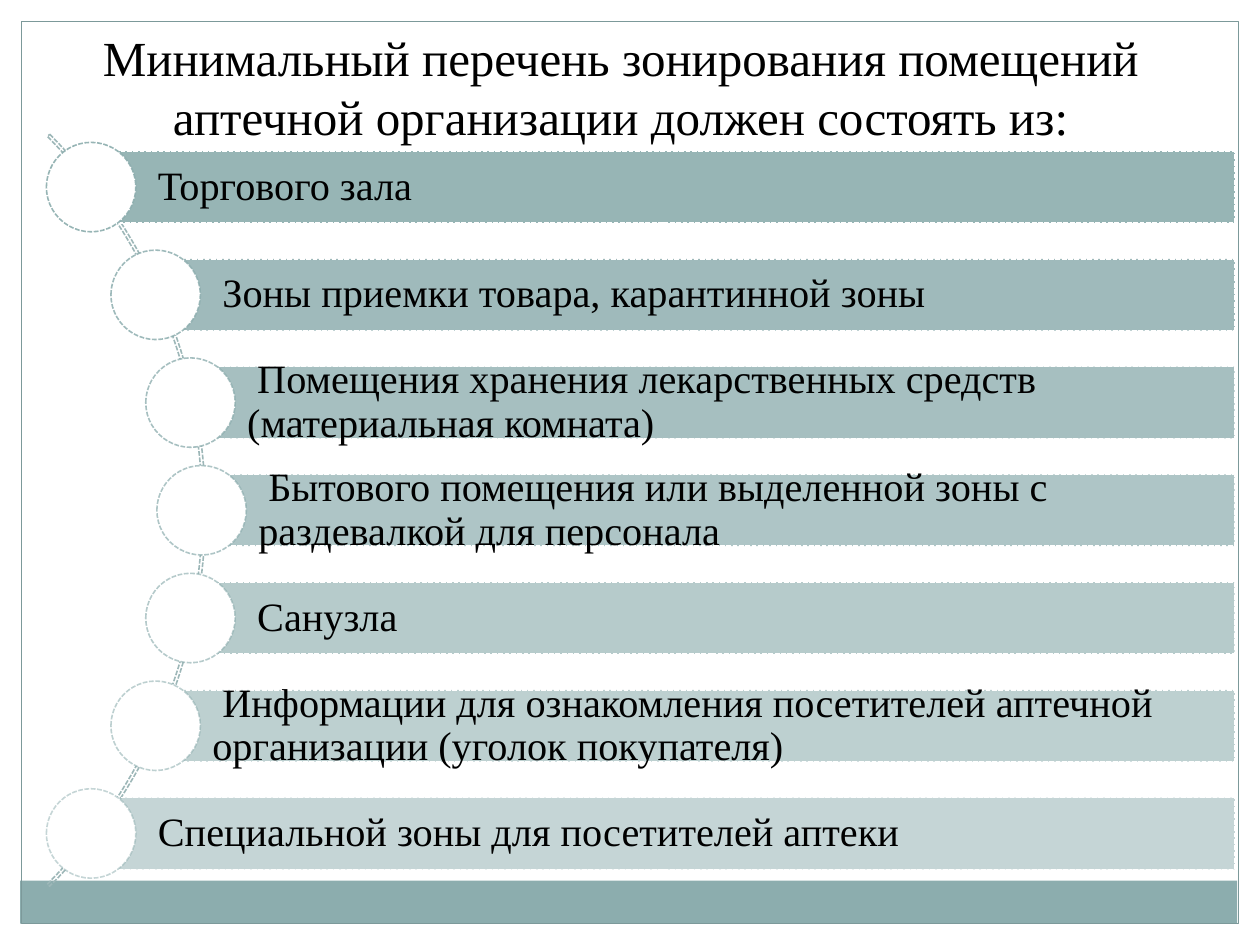
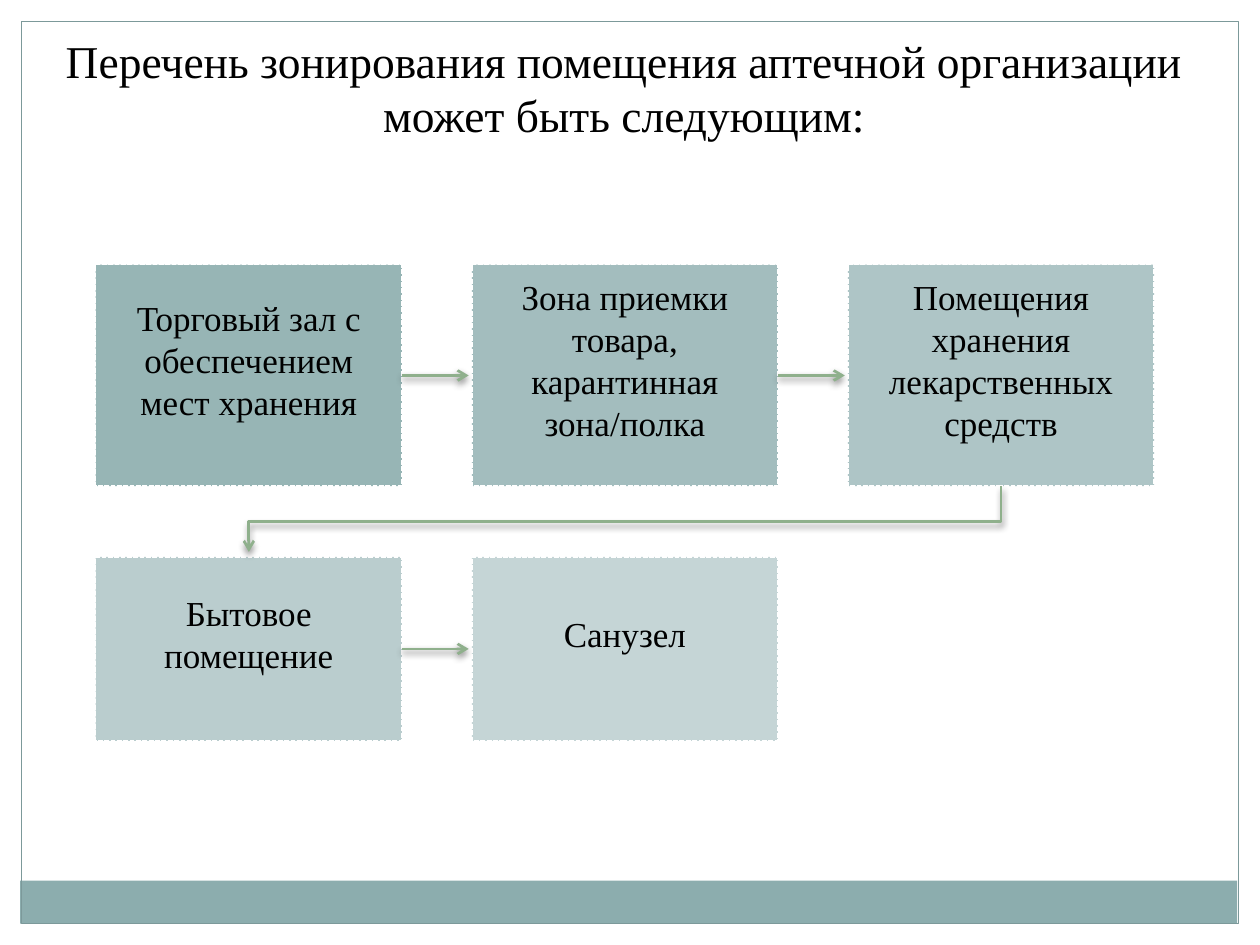
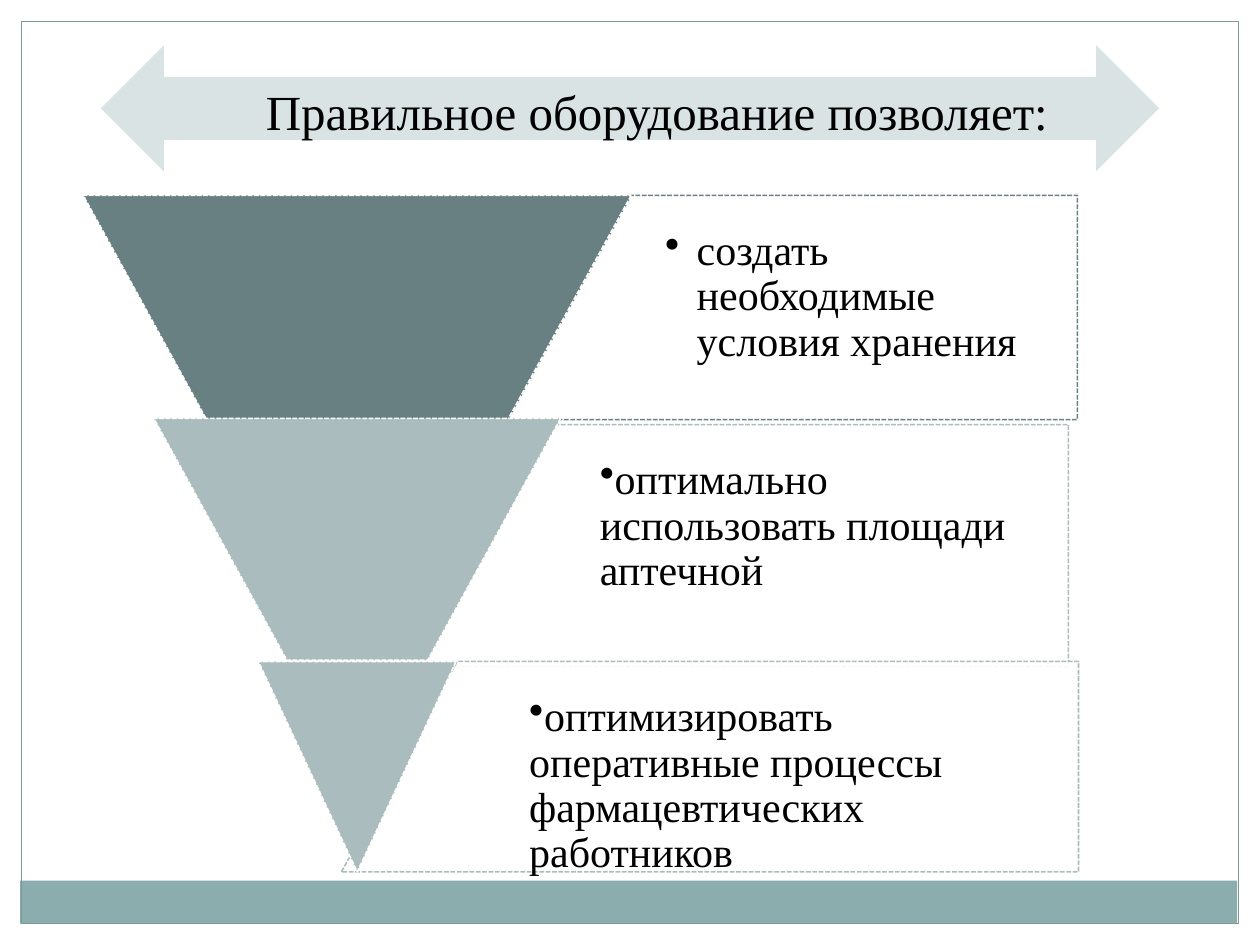
"""Build three slides on the zoning and equipment of a pharmacy."""
import dataclasses
import math

import lxml.etree
import pptx
import pptx.dml.color
import pptx.enum.dml
import pptx.enum.shapes
import pptx.enum.text
import pptx.oxml.ns
import pptx.util

SHAPE = pptx.enum.shapes.MSO_SHAPE
ALIGN = pptx.enum.text.PP_ALIGN
ANCHOR = pptx.enum.text.MSO_ANCHOR
qn = pptx.oxml.ns.qn
inch = pptx.util.Inches


@dataclasses.dataclass(frozen=True)
class Theme:
    """Colours, type sizes and line widths of the deck."""
    font: str = "Times New Roman"
    ink: str = "000000"
    paper: str = "FFFFFF"
    teal: str = "8CADAE"
    border: str = "7C999A"
    arc: str = "9DB7B8"
    dark: str = "688081"
    pale: str = "AABCBD"
    banner: str = "DAE3E3"
    green: str = "8FB08C"
    title: int = 28
    small_title: int = 26
    zone: int = 23
    step: int = 20
    benefit: int = 24
    thin: float = 0.75
    dashed: float = 0.9
    arrow: float = 1.57


THEME = Theme()
WIDTH, HEIGHT, MARGIN = 10, 7.5, 0.17

ZONES_TITLE = "Минимальный перечень зонирования помещений аптечной организации должен состоять из:"
ZONES = [
    "Торгового зала",
    "Зоны приемки товара, карантинной зоны",
    "Помещения хранения лекарственных средств (материальная комната)",
    "Бытового помещения или выделенной зоны с раздевалкой для персонала",
    "Санузла",
    "Информации для ознакомления посетителей аптечной организации (уголок покупателя)",
    "Специальной зоны для посетителей аптеки",
]

STEPS_TITLE = "Перечень зонирования помещения аптечной организации может быть следующим:"
STEP_ROWS = [
    (2.1, 1.76, ["Торговый зал с обеспечением мест хранения",
                 "Зона приемки товара, карантинная зона/полка",
                 "Помещения хранения лекарственных средств"]),
    (4.42, 1.46, ["Бытовое помещение", "Санузел"]),
]

BENEFITS_TITLE = "Правильное оборудование позволяет:"
BENEFITS = [
    dict(text="создать необходимые условия хранения", color=THEME.dark,
         funnel=(0.66, 1.55, 4.35, 1.78), slope=0.55,
         panel=(4.03, 1.55, 4.52, 1.78), text_left=5.01, indent=(0.25, -0.25)),
    dict(text="оптимально использовать площади аптечной", color=THEME.pale,
         funnel=(1.22, 3.32, 3.23, 1.92), slope=0.55,
         panel=(3.32, 3.37, 5.16, 1.92), text_left=4.37, indent=(0.12, 0)),
    dict(text="оптимизировать оперативные процессы фармацевтических работников", color=THEME.pale,
         funnel=(2.05, 5.25, 1.57, 1.67), slope=0.5,
         panel=(2.71, 5.25, 5.85, 1.67), text_left=3.62, indent=(0.31, 0)),
]


def rgb(color):
    """Turn a hex string into a colour."""
    return pptx.dml.color.RGBColor.from_string(color)


def add_child(parent, tag, **attributes):
    """Append an XML child with the given attributes."""
    return lxml.etree.SubElement(parent, qn(tag), {k: str(v) for k, v in attributes.items()})


def set_alpha(color_parent, percent):
    """Make the colour of a solid fill partly transparent."""
    add_child(color_parent.find(qn("a:solidFill"))[0], "a:alpha", val=round(percent * 1000))


def add_box(page, kind, at, fill=None, line=None, width=THEME.dashed, dashed=True,
            fill_alpha=None, line_alpha=None):
    """Add a preset shape with plain fill and outline."""
    box = page.shapes.add_shape(kind, *map(inch, at))
    box.shadow.inherit = False
    if fill:
        box.fill.solid()
        box.fill.fore_color.rgb = rgb(fill)
    else:
        box.fill.background()
    if line:
        box.line.color.rgb = rgb(line)
        box.line.width = pptx.util.Pt(width)
        if dashed:
            box.line.dash_style = pptx.enum.dml.MSO_LINE.SQUARE_DOT
    else:
        box.line.fill.background()
    properties = box.element.spPr
    if fill_alpha:
        set_alpha(properties, fill_alpha)
    if line_alpha:
        set_alpha(properties.find(qn("a:ln")), line_alpha)
    return box


def write(box, text, size, align=ALIGN.LEFT, anchor=ANCHOR.MIDDLE, insets=(0.1, 0.05, 0.1, 0.05),
          spacing=None, indent=None, bullet=False, wrap=True):
    """Write one paragraph into a shape."""
    frame = box.text_frame
    frame.word_wrap = wrap
    frame.auto_size = pptx.enum.text.MSO_AUTO_SIZE.NONE
    frame.vertical_anchor = anchor
    frame.margin_left, frame.margin_top, frame.margin_right, frame.margin_bottom = map(inch, insets)
    frame.text = text
    para = frame.paragraphs[0]
    para.alignment = align
    if spacing:
        para.line_spacing = spacing
    properties = para._p.get_or_add_pPr()
    if indent:
        properties.set("marL", str(inch(indent[0])))
        properties.set("indent", str(inch(indent[1])))
    if bullet:
        add_child(properties, "a:buChar", char="•")
    para.font.name = THEME.font
    para.font.size = pptx.util.Pt(size)
    para.font.color.rgb = rgb(THEME.ink)


def add_title(page, text, at, size=THEME.title, align=ALIGN.CENTER, wrap=True):
    """Place the title placeholder in front of the other shapes."""
    title = page.shapes.title
    title.left, title.top, title.width, title.height = map(inch, at)
    write(title, text, size, align, ANCHOR.TOP, wrap=wrap)
    page.shapes.element.append(title.element)


def add_frame(layout, page):
    """Move the margins, footer band and border to the layout."""
    inner = (MARGIN, MARGIN, WIDTH - 2 * MARGIN, HEIGHT - 2 * MARGIN)
    strips = [(0, 0, WIDTH, MARGIN), (WIDTH - MARGIN, 0, MARGIN, HEIGHT), (0, 0, MARGIN, HEIGHT)]
    parts = [add_box(page, SHAPE.RECTANGLE, strip, THEME.paper) for strip in strips]
    parts.append(add_box(page, SHAPE.RECTANGLE, (0.16, 6.99, 9.66, 0.34), THEME.teal))
    parts.append(add_box(page, SHAPE.RECTANGLE, inner, None, THEME.border, THEME.thin, False))
    for number, part in enumerate(parts):
        part.element.nvSpPr.cNvPr.set("id", str(100 + number))
        layout.shapes.element.insert(2 + number, part.element)


def style_arrow(arrow):
    """Give a line its colour, head and soft shadow."""
    arrow.line.color.rgb = rgb(THEME.green)
    arrow.line.width = pptx.util.Pt(THEME.arrow)
    properties = arrow.element.spPr
    add_child(properties.find(qn("a:ln")), "a:tailEnd", type="arrow")
    shadow = add_child(add_child(properties, "a:effectLst"), "a:outerShdw",
                       blurRad=pptx.util.Pt(4), dist=pptx.util.Pt(2), dir=90 * 60000, rotWithShape=0)
    add_child(add_child(shadow, "a:srgbClr", val=THEME.ink), "a:alpha", val=45000)


def fill_zones(page):
    """Hang the zone bars on a curve."""
    centre_x, centre_y, radius, outer = -2.59, 4.05, 4.19, 4.22
    pitch, disc, bar, right = 0.855, 0.71, 0.57, 9.8
    curve = add_box(page, SHAPE.BLOCK_ARC,
                    (centre_x - outer, centre_y - outer, 2 * outer, 2 * outer), None, THEME.arc)
    for index, value in enumerate((189, 27, 0.003)):
        curve.adjustments[index] = value
    last = len(ZONES) - 1
    for index, zone in enumerate(ZONES):
        drop = (index - last / 2) * pitch
        x, y = centre_x + math.sqrt(radius ** 2 - drop ** 2), centre_y + drop
        alpha = 90 - 40 * index / last
        box = add_box(page, SHAPE.RECTANGLE, (x, y - bar / 2, right - x, bar),
                      THEME.teal, THEME.paper, fill_alpha=alpha)
        write(box, zone, THEME.zone, insets=(0.45, 0.06, 0.06, 0.06), spacing=0.9, indent=(0, 0.08))
        add_box(page, SHAPE.OVAL, (x - disc / 2, y - disc / 2, disc, disc),
                THEME.paper, THEME.teal, line_alpha=alpha)
    add_title(page, ZONES_TITLE, (0.2, 0.17, 9.45, 1.51))


def fill_steps(page):
    """Lay out the steps in rows joined by arrows."""
    left, width, pitch, reach = 0.76, 2.43, 2.985, 0.53
    rows, alpha = [], 90
    for top, height, texts in STEP_ROWS:
        row = []
        for column, text in enumerate(texts):
            box = add_box(page, SHAPE.RECTANGLE, (left + column * pitch, top, width, height),
                          THEME.teal, THEME.paper, fill_alpha=alpha)
            write(box, text, THEME.step, ALIGN.CENTER, insets=(0.16, 0.16, 0.16, 0.41))
            row.append(box)
            alpha -= 10
        rows.append(row)
        for box in row[:-1]:
            x, y = box.left + box.width, box.top + box.height // 2
            arrow = page.shapes.add_connector(pptx.enum.shapes.MSO_CONNECTOR.STRAIGHT,
                                              x, y, x + inch(reach), y)
            arrow.begin_connect(box, 3)
            style_arrow(arrow)
    source, target = rows[0][-1], rows[1][0]
    start_x, end_x = (box.left + box.width // 2 for box in (source, target))
    start_y, end_y = source.top + source.height, target.top - inch(0.04)
    middle = (start_y + target.top) // 2
    builder = page.shapes.build_freeform(start_x, start_y)
    builder.add_line_segments([(start_x, middle), (end_x, middle), (end_x, end_y)], close=False)
    turn = builder.convert_to_shape()
    turn.fill.background()
    style_arrow(turn)
    add_title(page, STEPS_TITLE, (0.35, 0.21, 9.21, 1.41), THEME.small_title)


def fill_benefits(page):
    """Stack the funnel with a bullet beside each part."""
    add_box(page, SHAPE.LEFT_RIGHT_ARROW, (0.8, 0.36, 8.4, 1), THEME.banner)
    for benefit in BENEFITS:
        left, top, width, height = benefit["panel"]
        panel = add_box(page, SHAPE.NON_ISOSCELES_TRAPEZOID, benefit["panel"],
                        THEME.paper, benefit["color"], fill_alpha=90)
        panel.adjustments[0], panel.adjustments[1] = 0.55, 0
        text_left = benefit["text_left"]
        box = page.shapes.add_textbox(*map(inch, (text_left, top, left + width - text_left, height)))
        write(box, benefit["text"], THEME.benefit, anchor=ANCHOR.TOP, insets=(0.27,) * 4,
              spacing=0.9, indent=benefit["indent"], bullet=True)
        funnel = add_box(page, SHAPE.TRAPEZOID, benefit["funnel"], benefit["color"], THEME.paper)
        funnel.adjustments[0] = benefit["slope"]
        funnel.rotation = 180
    add_title(page, BENEFITS_TITLE, (2.01, 0.6, 6.47, 0.57), align=ALIGN.LEFT, wrap=False)


def main():
    """Create the deck and save it."""
    deck = pptx.Presentation()
    deck.slide_width, deck.slide_height = inch(WIDTH), inch(HEIGHT)
    layout = deck.slide_layouts.get_by_name("Title Only")
    pages = [deck.slides.add_slide(layout) for _ in range(3)]
    add_frame(layout, pages[0])
    for page, fill_page in zip(pages, (fill_zones, fill_steps, fill_benefits)):
        fill_page(page)
    deck.save("out.pptx")


if __name__ == "__main__":
    main()
